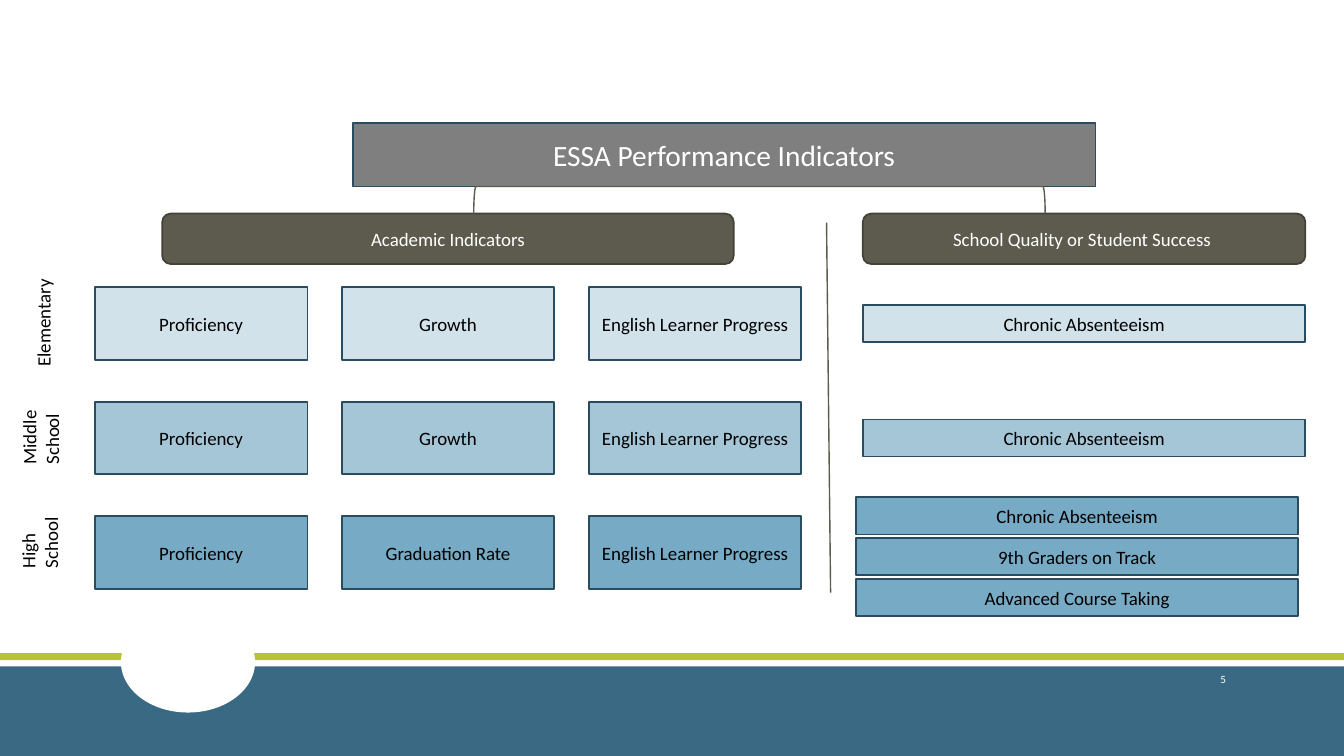
from lxml.etree import SubElement
from pptx import Presentation
from pptx.dml.color import RGBColor
from pptx.enum.shapes import MSO_CONNECTOR, MSO_SHAPE
from pptx.enum.text import MSO_ANCHOR, MSO_AUTO_SIZE, PP_ALIGN
from pptx.oxml.ns import qn
from pptx.util import Pt

THEME = {
    "font": "Calibri",
    "title_size": 21,
    "body_size": 13.5,
    "number_size": 7.9,
    "white": "FFFFFF",
    "black": "000000",
    "title_fill": "7F7F7F",
    "heading_fill": "5D5B4E",
    "heading_line": "434238",
    "box_line": "2A4C5F",
    "band": "3A6983",
    "stripe": "B7C333",
    "elementary": "D1E2EB",
    "middle": "A5C6D7",
    "high": "77AAC4",
}

TITLE = ("ESSA Performance Indicators", (252, 87.8, 530.6, 45.4))
HEADINGS = [
    ("Academic Indicators", (115.9, 152.6, 408.2, 36)),
    ("School Quality or Student Success ", (616.3, 152.6, 316.1, 36)),
]
LEVELS = [
    {
        "label": "Elementary",
        "label_box": (-5, 213.1, 79.9, 31.7),
        "fill": "elementary",
        "academic": ["Proficiency", "Growth", "English Learner Progress"],
        "success": ["Chronic Absenteeism"],
        "shift": (0, 0),
    },
    {
        "label": "Middle School",
        "label_box": (7.2, 283.7, 56.9, 53.3),
        "fill": "middle",
        "academic": ["Proficiency", "Growth", "English Learner Progress"],
        "success": ["Chronic Absenteeism"],
        "shift": (0, 0),
    },
    {
        "label": "High School",
        "label_box": (8.6, 360, 52.6, 53.3),
        "fill": "high",
        "academic": ["Proficiency", "Graduation Rate", "English Learner Progress"],
        "success": ["Chronic Absenteeism", "9th Graders on Track", "Advanced Course Taking"],
        "shift": (-5, 3),
    },
]
BACKDROP = [
    (MSO_SHAPE.RECTANGLE, (0, 476, 960, 64), "band"),
    (MSO_SHAPE.RECTANGLE, (0, 466.5, 960, 5), "stripe"),
    (MSO_SHAPE.OVAL, (86.4, 437, 95.8, 72), "white"),
]
SLIDE_NUMBER = ("5", (779.8, 470.9, 103, 28.8))
BRACKET = (532.8, -61.2, 19.4, 408.2)
DIVIDER = (590.4, 159.1, 593.3, 423.4)

GRID_LEFT, GRID_TOP = 67.7, 205.2
COLUMN_STEP, ROW_STEP = 176.4, 81.8
CELL_WIDTH, CELL_HEIGHT = 151.9, 51.8
SUCCESS_LEFT, SUCCESS_WIDTH, SUCCESS_HEIGHT, SUCCESS_STEP = 616.3, 316.1, 26.6, 29.2


def color(name):
    return RGBColor.from_string(THEME[name])


def apply(target, values):
    for name, value in values.items():
        setattr(target, name, value)


def place(shape, box):
    apply(shape, dict(zip(("left", "top", "width", "height"), map(Pt, box))))


def paint(shape, fill=None, line=None, width=1.25):
    shape.shadow.inherit = False
    if fill:
        shape.fill.solid()
        shape.fill.fore_color.rgb = color(fill)
    else:
        shape.fill.background()
    if line:
        shape.line.color.rgb = color(line)
        shape.line.width = Pt(width)
    else:
        shape.line.fill.background()


def write(shape, text, ink="black", size="body_size", align=PP_ALIGN.CENTER, anchor=MSO_ANCHOR.MIDDLE):
    frame = shape.text_frame
    apply(frame, {
        "text": text,
        "word_wrap": True,
        "auto_size": MSO_AUTO_SIZE.NONE,
        "vertical_anchor": anchor,
        "margin_left": Pt(7.2),
        "margin_right": Pt(7.2),
        "margin_top": Pt(3.6),
        "margin_bottom": Pt(3.6),
    })
    paragraph = frame.paragraphs[0]
    paragraph.alignment = align
    font = paragraph.runs[0].font
    apply(font, {"name": THEME["font"], "size": Pt(THEME[size])})
    font.color.rgb = color(ink)


def add_box(slide, kind, box, fill=None, line=None, width=1.25):
    shape = slide.shapes.add_shape(kind, *map(Pt, box))
    paint(shape, fill, line, width)
    return shape


def add_text(slide, text, box, **style):
    shape = slide.shapes.add_textbox(*map(Pt, box))
    write(shape, text, **style)
    return shape


def add_title(slide):
    text, box = TITLE
    title = slide.shapes.title
    place(title, box)
    geometry = SubElement(title.element.spPr, qn("a:prstGeom"), prst="roundRect")
    SubElement(geometry, qn("a:avLst"))
    paint(title, "title_fill", "box_line")
    write(title, text, ink="white", size="title_size")


def add_divider(slide):
    divider = slide.shapes.add_connector(MSO_CONNECTOR.STRAIGHT, *map(Pt, DIVIDER))
    divider.line.color.rgb = color("heading_fill")
    divider.line.width = Pt(1)
    SubElement(divider.element.spPr, qn("a:effectLst"))


def add_level(slide, row, level):
    top = GRID_TOP + row * ROW_STEP
    boxes = [
        (text, (GRID_LEFT + column * COLUMN_STEP, top, CELL_WIDTH, CELL_HEIGHT))
        for column, text in enumerate(level["academic"])
    ]
    shift_x, shift_y = level["shift"]
    stack_height = (len(level["success"]) - 1) * SUCCESS_STEP + SUCCESS_HEIGHT
    stack_top = top + (CELL_HEIGHT - stack_height) / 2 + shift_y
    boxes += [
        (text, (SUCCESS_LEFT + shift_x, stack_top + index * SUCCESS_STEP, SUCCESS_WIDTH, SUCCESS_HEIGHT))
        for index, text in enumerate(level["success"])
    ]
    for text, box in boxes:
        write(add_box(slide, MSO_SHAPE.RECTANGLE, box, level["fill"], "box_line"), text)
    label = add_text(slide, level["label"], level["label_box"], align=PP_ALIGN.LEFT, anchor=MSO_ANCHOR.TOP)
    label.rotation = 270


def main():
    presentation = Presentation()
    apply(presentation, {"slide_width": Pt(960), "slide_height": Pt(540)})
    slide = presentation.slides.add_slide(presentation.slide_layouts.get_by_name("Title Only"))
    for kind, box, fill in BACKDROP:
        add_box(slide, kind, box, fill)
    add_title(slide)
    for text, box in HEADINGS:
        heading = add_box(slide, MSO_SHAPE.ROUNDED_RECTANGLE, box, "heading_fill", "heading_line")
        write(heading, text, ink="white")
    add_divider(slide)
    bracket = add_box(slide, MSO_SHAPE.RIGHT_BRACKET, BRACKET, line="heading_fill", width=1)
    bracket.rotation = 270
    for row, level in enumerate(LEVELS):
        add_level(slide, row, level)
    text, box = SLIDE_NUMBER
    add_text(slide, text, box, ink="white", size="number_size", align=PP_ALIGN.RIGHT)
    presentation.save("out.pptx")


if __name__ == "__main__":
    main()
